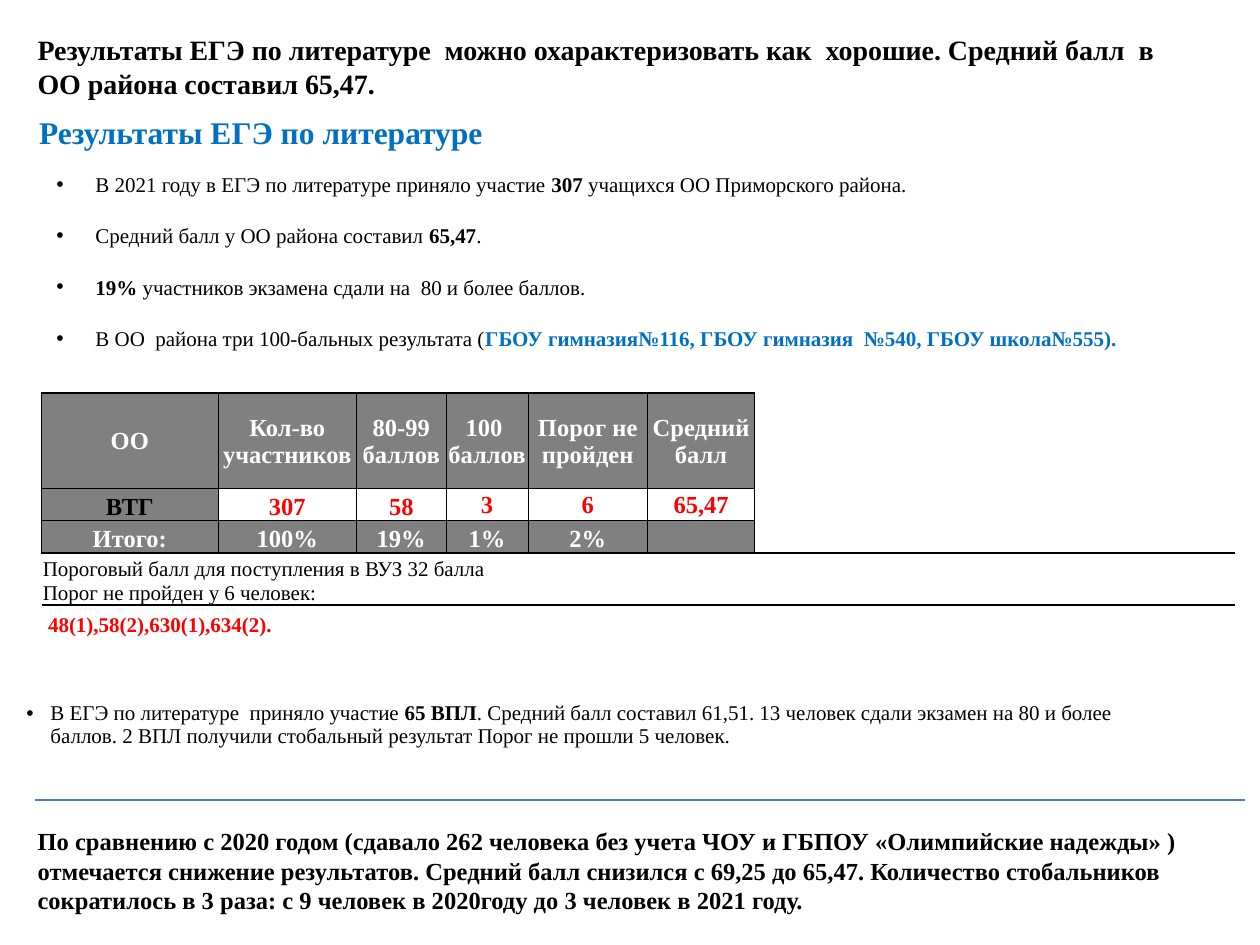
from dataclasses import dataclass

from lxml.etree import SubElement
from pptx import Presentation
from pptx.dml.color import RGBColor
from pptx.enum.shapes import MSO_CONNECTOR
from pptx.enum.text import MSO_ANCHOR as Anchor, MSO_AUTO_SIZE as AutoSize, PP_ALIGN as Align
from pptx.oxml import parse_xml
from pptx.oxml.ns import nsdecls, qn
from pptx.util import Inches, Pt


@dataclass(frozen=True)
class Theme:
    font: str = "Times New Roman"
    black: str = "000000"
    white: str = "FFFFFF"
    blue: str = "0070C0"
    red: str = "FF0000"
    gray: str = "808080"
    rule: str = "4B7EBC"
    heading: int = 18
    lead: int = 16
    strong: int = 14
    body: int = 12
    plain_table: str = "{2D5ABB26-0587-4C30-8999-92F81FD0307C}"


THEME = Theme()
BOLD = {"bold": True}

# A paragraph is a string or a list of strings and (string, format) pairs.
TITLE = "Результаты ЕГЭ по литературе"
LEAD = ("Результаты ЕГЭ по литературе  можно охарактеризовать как  хорошие. "
        "Средний балл  в ОО района составил 65,47.")
FACTS = [
    ["В 2021 году в ЕГЭ по литературе приняло участие ", ("307 ", BOLD),
     "учащихся ОО Приморского района."],
    ["Средний балл у ОО района составил", (" 65,47", BOLD), "."],
    [("19%", BOLD), " участников экзамена сдали на  80 и более баллов."],
    ["В ОО  района три 100-бальных результата (",
     ("ГБОУ гимназия№116, ГБОУ гимназия  №540, ГБОУ школа№555).",
      {"bold": True, "color": THEME.blue})],
]
SCORES = [
    ["ОО", "Кол-во участников", "80-99 баллов", "100  баллов", "Порог не пройден", "Средний балл"],
    ["ВТГ", "307", "58", "3", "6", "65,47"],
    ["Итого:", "100%", "19%", "1%", "2%", ""],
]
THRESHOLD = ["Пороговый балл для поступления в ВУЗ 32 балла", "Порог не пройден у 6 человек:"]
FAILED = [[" ", ("48(1),58(2),630(1),634(2).", {"bold": True, "color": THEME.red})]]
GRADUATES = [["В ЕГЭ по литературе  приняло участие ", ("65 ВПЛ", BOLD),
              ". Средний балл составил 61,51. 13 человек сдали экзамен на 80 и более баллов. "
              "2 ВПЛ получили стобальный результат Порог не прошли 5 человек."]]
CONCLUSION = ("По сравнению с 2020 годом (сдавало 262 человека без учета ЧОУ и ГБПОУ "
              "«Олимпийские надежды» ) отмечается снижение результатов. Средний балл снизился "
              "с 69,25 до 65,47. Количество стобальников сократилось в 3 раза: с 9 человек "
              "в 2020году до 3 человек в 2021 году.")

SCORE_COLS = [1.4, 1.1, 0.71, 0.65, 0.95, 0.85, 0.53, 0.92] + [0.59] * 4
SCORE_ROWS = [0.76, 0.25, 0.26, 0.41, 0.26]


def write(frame, paragraphs, size=THEME.body, color=THEME.black, bold=False,
          align=Align.LEFT, indent=0, gap=0):
    """Fill a text frame; a positive indent adds bullets hanging by that many inches."""
    for i, content in enumerate(paragraphs):
        para = frame.paragraphs[0] if i == 0 else frame.add_paragraph()
        para.alignment = align
        if gap and i < len(paragraphs) - 1:
            para.space_after = Pt(gap)
        if indent:
            props = para._p.get_or_add_pPr()
            props.set("marL", str(Inches(indent)))
            props.set("indent", str(-Inches(indent)))
            SubElement(props, qn("a:buFont")).set("typeface", "Arial")
            SubElement(props, qn("a:buChar")).set("char", "•")
        for part in [content] if isinstance(content, str) else content:
            words, own = (part, {}) if isinstance(part, str) else part
            run = para.add_run()
            run.text = words
            run.font.name = THEME.font
            run.font.size = Pt(size)
            run.font.bold = own.get("bold", bold)
            run.font.color.rgb = RGBColor.from_string(own.get("color", color))


def add_text(slide, box, paragraphs, **fmt):
    frame = slide.shapes.add_textbox(*map(Inches, box)).text_frame
    frame.word_wrap = True
    frame.auto_size = AutoSize.SHAPE_TO_FIT_TEXT
    write(frame, paragraphs, **fmt)


def add_plain_table(slide, left, top, cols, rows):
    """Add an unstyled table whose empty cells do not stretch their rows."""
    table = slide.shapes.add_table(len(rows), len(cols), Inches(left), Inches(top),
                                   Inches(sum(cols)), Inches(sum(rows))).table
    table.first_row = table.horz_banding = False
    table._tbl.tblPr.find(qn("a:tableStyleId")).text = THEME.plain_table
    for column, width in zip(table.columns, cols):
        column.width = Inches(width)
    for row, height in zip(table.rows, rows):
        row.height = Inches(height)
    for cell in table.iter_cells():
        cell.margin_left = cell.margin_right = cell.margin_top = Inches(0.01)
        cell.margin_bottom = 0
        cell.vertical_anchor = Anchor.BOTTOM
        cell.fill.background()
        cell.text_frame.paragraphs[0]._p.get_or_add_endParaRPr().set("sz", "800")
    return table


def set_borders(cell, **widths):
    """Draw black borders; widths in points keyed by L, R, T, B."""
    props = cell._tc.get_or_add_tcPr()
    sides = [side for side in "LRTB" if side in widths]
    for place, side in enumerate(sides):
        props.insert(place, parse_xml(
            f'<a:ln{side} {nsdecls("a")} w="{Pt(widths[side])}"><a:solidFill>'
            f'<a:srgbClr val="{THEME.black}"/></a:solidFill></a:ln{side}>'))


def add_scores(slide):
    table = add_plain_table(slide, 0.33, 3.12, SCORE_COLS, SCORE_ROWS)
    last_row, last_col = len(SCORES) - 1, len(SCORES[0]) - 1
    for r, values in enumerate(SCORES):
        for c, value in enumerate(values):
            cell = table.cell(r, c)
            is_result = r == 1 and c > 0
            if not is_result:
                cell.fill.solid()
                cell.fill.fore_color.rgb = RGBColor.from_string(THEME.gray)
            if r == 0 or (r == 1 and c > 2):
                cell.vertical_anchor = Anchor.MIDDLE
            color = THEME.red if is_result else THEME.black if r == 1 else THEME.white
            if value:
                write(cell.text_frame, [value], size=THEME.strong, color=color,
                      bold=True, align=Align.CENTER)
            set_borders(cell, L=0.5 if c else 1, T=0.5 if r else 1,
                        R=1 if c == last_col and r < last_row else 0.5,
                        B=1 if r == last_row else 0.5)
    notes_row = last_row + 1
    for c in range(len(SCORE_COLS)):
        set_borders(table.cell(notes_row, c), T=1)
    table.cell(notes_row, 0).merge(table.cell(notes_row, len(SCORE_COLS) - 1))
    table.cell(notes_row + 1, 0).merge(table.cell(notes_row + 1, 2))
    write(table.cell(notes_row, 0).text_frame, THRESHOLD)
    write(table.cell(notes_row + 1, 0).text_frame, FAILED)


def add_rule(slide, left, right, y):
    rule = slide.shapes.add_connector(MSO_CONNECTOR.STRAIGHT, *map(Inches, (left, y, right, y)))
    rule.line.color.rgb = RGBColor.from_string(THEME.rule)
    rule.line.width = Pt(1.5)
    SubElement(rule._element.spPr, qn("a:effectLst"))


def main():
    deck = Presentation()
    deck.slide_width, deck.slide_height = Inches(10), Inches(7.5)
    slide = deck.slides.add_slide(deck.slide_layouts[5])

    title = slide.shapes.title
    title.left, title.top, title.width, title.height = map(Inches, (0.21, 0.85, 3.76, 0.4))
    title.text_frame.word_wrap = False
    title.text_frame.auto_size = AutoSize.SHAPE_TO_FIT_TEXT
    title.text_frame.vertical_anchor = Anchor.TOP
    write(title.text_frame, [TITLE], size=THEME.heading, color=THEME.blue, bold=True)

    graduates = add_plain_table(slide, 0.2, 5.32, [9.11], [0.62, 0.23])
    write(graduates.cell(0, 0).text_frame, GRADUATES, indent=0.19)

    add_text(slide, (0.2, 0.21, 9.13, 0.64), [LEAD], size=THEME.lead, bold=True)
    add_text(slide, (0.35, 1.31, 9.76, 1.51), FACTS, indent=0.31, gap=15)
    add_text(slide, (0.2, 6.51, 9.45, 0.81), [CONCLUSION], size=THEME.strong, bold=True)
    add_rule(slide, 0.28, 9.88, 6.35)
    add_scores(slide)
    deck.save("out.pptx")


if __name__ == "__main__":
    main()
